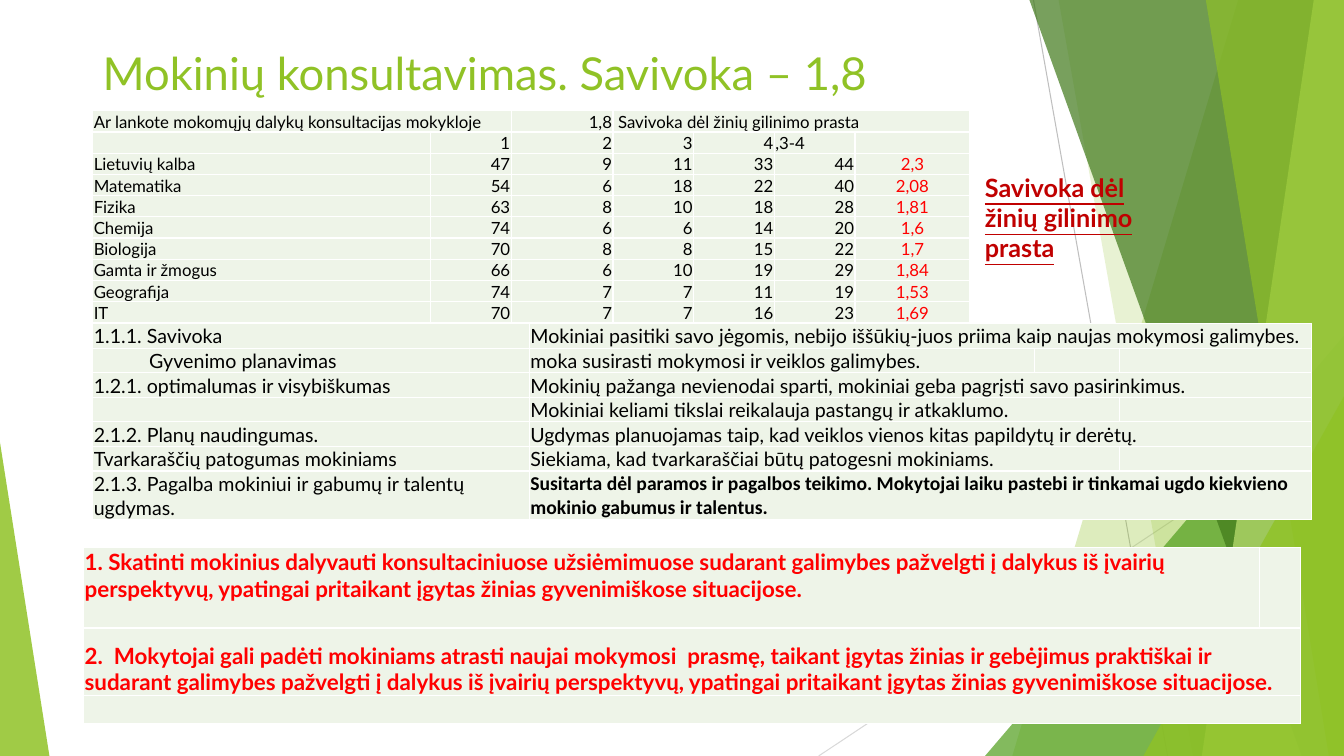
from lxml import etree
from pptx import Presentation
from pptx.dml.color import RGBColor
from pptx.enum.shapes import MSO_CONNECTOR, MSO_SHAPE
from pptx.enum.text import MSO_ANCHOR, PP_ALIGN
from pptx.oxml.ns import qn
from pptx.util import Inches, Pt

LEFT, MID, RIGHT = PP_ALIGN.LEFT, PP_ALIGN.CENTER, PP_ALIGN.RIGHT
TOP, LOW = MSO_ANCHOR.TOP, MSO_ANCHOR.BOTTOM
STRAIGHT = MSO_CONNECTOR.STRAIGHT
TRIANGLE = MSO_SHAPE.ISOSCELES_TRIANGLE

FONT = "Lato"
GREEN, PALE, WHITE = "90C226", "EEF4E8", "FFFFFF"
BLACK, RED, DARK = "000000", "FF0000", "C00000"

SCORES = [
    ["Ar lankote mokomųjų dalykų konsultacijas mokykloje", None, "1,8",
     "Savivoka dėl žinių gilinimo prasta", None, None, None],
    ["", "1", "2", "3", "4", ",3-4", ""],
    ["Lietuvių kalba", "47", "9", "11", "33", "44", "2,3"],
    ["Matematika", "54", "6", "18", "22", "40", "2,08"],
    ["Fizika", "63", "8", "10", "18", "28", "1,81"],
    ["Chemija", "74", "6", "6", "14", "20", "1,6"],
    ["Biologija", "70", "8", "8", "15", "22", "1,7"],
    ["Gamta ir žmogus", "66", "6", "10", "19", "29", "1,84"],
    ["Geografija", "74", "7", "7", "11", "19", "1,53"],
    ["IT", "70", "7", "7", "16", "23", "1,69"],
]
GOALS = [
    ["1.1.1. Savivoka",
     "Mokiniai pasitiki savo jėgomis, nebijo iššūkių-juos priima kaip naujas mokymosi galimybes.",
     None, None],
    ["Gyvenimo planavimas", "moka susirasti mokymosi ir veiklos galimybes.", "", ""],
    ["1.2.1. optimalumas ir visybiškumas",
     "Mokinių pažanga nevienodai sparti, mokiniai geba pagrįsti savo pasirinkimus.", None, None],
    ["", "Mokiniai keliami tikslai reikalauja pastangų ir atkaklumo.", None, ""],
    ["2.1.2. Planų naudingumas.",
     "Ugdymas planuojamas taip, kad veiklos vienos kitas papildytų ir derėtų.", None, None],
    ["Tvarkaraščių patogumas mokiniams",
     "Siekiama, kad tvarkaraščiai būtų patogesni mokiniams.", None, ""],
    ["2.1.3. Pagalba mokiniui ir gabumų ir talentų ugdymas.",
     "Susitarta dėl paramos ir pagalbos teikimo. Mokytojai laiku pastebi ir tinkamai ugdo "
     "kiekvieno mokinio gabumus ir talentus.", None, None],
]
ADVICE = [
    ["1. Skatinti mokinius dalyvauti konsultaciniuose užsiėmimuose sudarant galimybes pažvelgti "
     "į dalykus iš įvairių perspektyvų, ypatingai pritaikant įgytas žinias gyvenimiškose "
     "situacijose.", ""],
    ["2.  Mokytojai gali padėti mokiniams atrasti naujai mokymosi  prasmę, taikant įgytas žinias "
     "ir gebėjimus praktiškai ir\nsudarant galimybes pažvelgti į dalykus iš įvairių perspektyvų, "
     "ypatingai pritaikant įgytas žinias gyvenimiškose situacijose.", None],
    ["", None],
]


def paint(target, color):
    target.solid()
    target.fore_color.rgb = RGBColor.from_string(color)


def style(frame, size, color, font=FONT, bold=False, under=False, align=LEFT):
    for para in frame.paragraphs:
        para.alignment = align
        for run in para.runs:
            run.font.name = font
            run.font.size = Pt(size)
            run.font.bold = bold
            run.font.underline = under
            run.font.color.rgb = RGBColor.from_string(color)
        if not para.runs:
            etree.SubElement(para._p, qn("a:endParaRPr"), sz=str(size * 100))


def label(slide, text, box, size, color, **look):
    shape = slide.shapes.add_textbox(*map(Inches, box))
    frame = shape.text_frame
    frame.word_wrap = True
    frame.text = text
    style(frame, size, color, **look)


def line(slide, start, end, color):
    link = slide.shapes.add_connector(STRAIGHT, *map(Inches, start + end))
    link.line.width = Pt(0.75)
    link.line.color.rgb = RGBColor.from_string(color)
    etree.SubElement(link._element.spPr, qn("a:effectLst"))


def tint(shape, color, alpha):
    shape.shadow.inherit = False
    paint(shape.fill, color)
    shape.line.fill.background()
    tone = shape._element.spPr.find(qn("a:solidFill"))[0]
    etree.SubElement(tone, qn("a:alpha"), val=str(alpha * 1000))


def band(slide, top, low, color, alpha):
    points = [(13.33, 0), (13.33, 7.5), (low, 7.5), (top, 0)]
    points = [(Inches(x), Inches(y)) for x, y in points]
    path = slide.shapes.build_freeform(*points[0])
    path.add_line_segments(points[1:], close=True)
    tint(path.convert_to_shape(), color, alpha)


def wedge(slide, box, peak, color, alpha):
    shape = slide.shapes.add_shape(TRIANGLE, *map(Inches, box))
    shape.adjustments[0] = peak
    tint(shape, color, alpha)


def frame_cell(cell):
    props = cell._tc.get_or_add_tcPr()
    for side in ("lnL", "lnR", "lnT", "lnB"):
        edge = etree.SubElement(props, qn("a:" + side), w=str(Pt(1)))
        fill = etree.SubElement(edge, qn("a:solidFill"))
        etree.SubElement(fill, qn("a:srgbClr"), val=WHITE)
    paint(cell.fill, PALE)


def grid(slide, left, top, cols, rows, data, size, color, bold=False):
    shape = slide.shapes.add_table(len(rows), len(cols), Inches(left), Inches(top),
                                   Inches(sum(cols)), Inches(sum(rows)))
    table = shape.table
    table.first_row = table.horz_banding = False
    for col, width in zip(table.columns, cols):
        col.width = Inches(width)
    for row, height in zip(table.rows, rows):
        row.height = Inches(height)
    for r, texts in enumerate(data):
        for c, text in enumerate(texts):
            cell = table.cell(r, c)
            cell.margin_left = cell.margin_right = cell.margin_top = Inches(0.01)
            cell.margin_bottom = 0
            cell.vertical_anchor = LOW
            cell.text = text or ""
            style(cell.text_frame, size, color, bold=bold)
            frame_cell(cell)
        for c, text in enumerate(texts):
            if text is not None:
                last = c
                while last + 1 < len(texts) and texts[last + 1] is None:
                    last += 1
                if last > c:
                    table.cell(r, c).merge(table.cell(r, last))
    return table


def scenery(slide):
    line(slide, (10.25, 0), (11.58, 7.5), "BFBFBF")
    line(slide, (13.33, 4.03), (8.12, 7.5), "D9D9D9")
    band(slide, 12.28, 10.04, GREEN, 30)
    band(slide, 10.5, 11.83, GREEN, 20)
    wedge(slide, (9.77, 3.33, 3.56, 4.17), 1, "54A021", 72)
    band(slide, 10.21, 12.91, "3F7819", 70)
    band(slide, 13.03, 11.92, "C0E474", 70)
    band(slide, 11.96, 13.18, GREEN, 65)
    wedge(slide, (11.34, 3.93, 1.99, 3.57), 1, GREEN, 80)
    wedge(slide, (0, 4.39, 0.49, 3.11), 0, GREEN, 85)


def score_grid(slide):
    cols = [3.35, 0.8, 1.01, 0.8, 0.8, 0.8, 1.14]
    table = grid(slide, 0.92, 1.1, cols, [2.08 / 10] * 10, SCORES, 12, BLACK)
    for r in range(len(SCORES)):
        for c in range(1, 6):
            if (r, c) not in ((0, 3), (1, 5)):
                style(table.cell(r, c).text_frame, 12, BLACK, align=RIGHT)
        if r > 1:
            style(table.cell(r, 6).text_frame, 12, RED, align=MID)
    table.cell(0, 3).margin_left = Inches(0.05)


def goal_grid(slide):
    cols = [4.33, 5.01, 0.84, 1.91]
    table = grid(slide, 0.92, 3.21, cols, [0.24] * 6 + [0.48], GOALS, 14, BLACK)
    table.cell(1, 0).margin_left = Inches(0.56)
    style(table.cell(6, 1).text_frame, 14, BLACK, font="Calibri", bold=True)


def advice_grid(slide):
    table = grid(slide, 0.83, 5.43, [11.66, 0.41], [0.8, 0.67, 0.28], ADVICE, 16, RED, bold=True)
    table.cell(0, 0).vertical_anchor = TOP


def main():
    deck = Presentation()
    deck.slide_width, deck.slide_height = Inches(13.33), Inches(7.5)
    slide = deck.slides.add_slide(deck.slide_layouts[6])
    scenery(slide)
    label(slide, "Mokinių konsultavimas. Savivoka – 1,8", (0.92, 0.4, 11.5, 0.53), 32.4, GREEN)
    score_grid(slide)
    goal_grid(slide)
    advice_grid(slide)
    label(slide, "Savivoka dėl žinių gilinimo prasta", (9.67, 1.66, 1.94, 1.31), 18, DARK,
          bold=True, under=True)
    deck.save("out.pptx")


if __name__ == "__main__":
    main()
